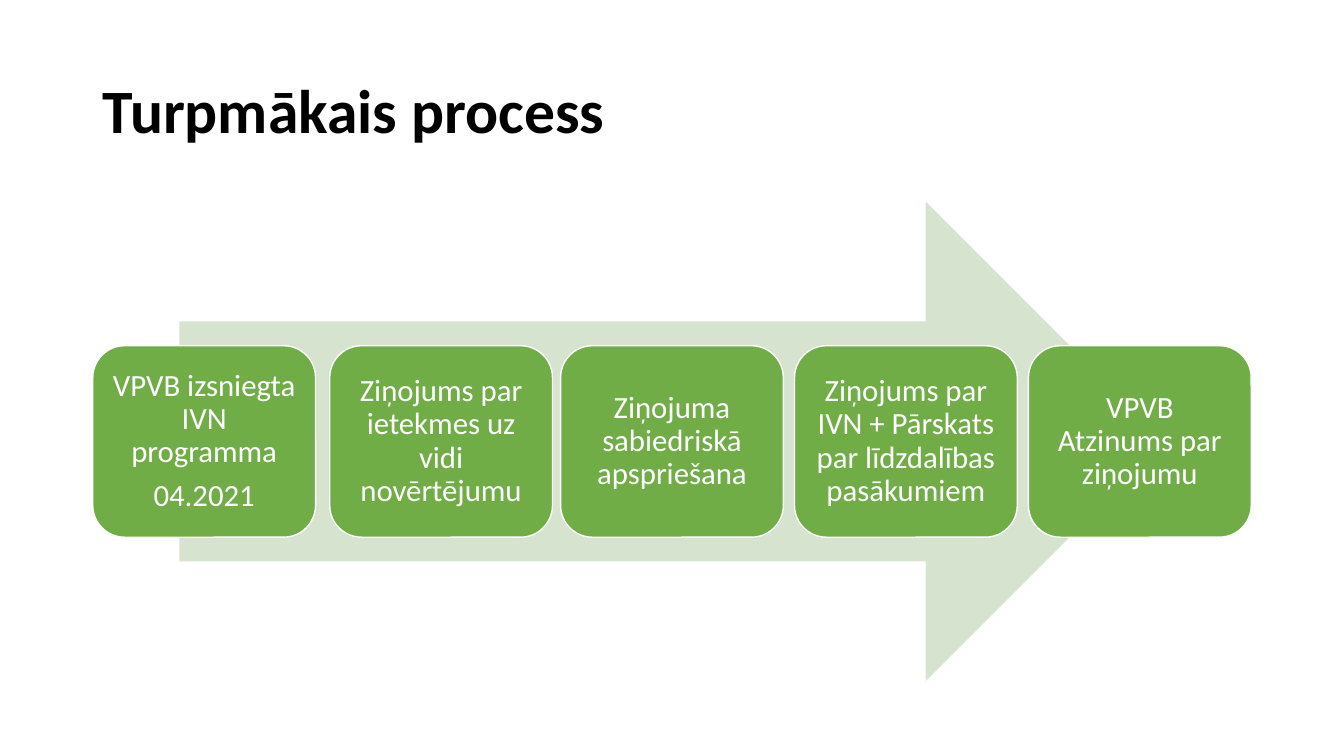
"""Build a slide showing the next steps of the process along an arrow."""
import pptx
import pptx.util
import pptx.dml.color
import pptx.enum.shapes
import pptx.enum.text

Inches = pptx.util.Inches
Pt = pptx.util.Pt
RGBColor = pptx.dml.color.RGBColor
Shape = pptx.enum.shapes.MSO_SHAPE
Align = pptx.enum.text.PP_ALIGN

TITLE = "Turpmākais process"
STEPS = [
    (0.92, ["VPVB izsniegta IVN programma", "04.2021"]),
    (3.27, ["Ziņojums par ietekmes uz vidi novērtējumu"]),
    (5.56, ["Ziņojuma sabiedriskā apspriešana"]),
    (7.88, ["Ziņojums par IVN + Pārskats par līdzdalības pasākumiem"]),
    (10.2, ["VPVB Atzinums par ziņojumu"]),
]

BLACK = RGBColor(0x00, 0x00, 0x00)
WHITE = RGBColor(0xFF, 0xFF, 0xFF)
GREEN = RGBColor(0x70, 0xAD, 0x47)
PALE_GREEN = RGBColor(0xD5, 0xE3, 0xCF)

ARROW_TOP, ARROW_HEIGHT = 2, 4.76
STEP_WIDTH, STEP_HEIGHT = 2.21, 1.9
STEP_TOP = ARROW_TOP + (ARROW_HEIGHT - STEP_HEIGHT) / 2

TITLE_FONT = {"name": "Calibri", "size": Pt(44), "bold": True}
STEP_FONT = {"name": "Calibri", "size": Pt(22)}
TITLE_PARA = {"alignment": Align.LEFT, "line_spacing": 0.9}
STEP_PARA = {"alignment": Align.CENTER, "line_spacing": 0.9, "space_after": Pt(7.7)}
FRAME = {"word_wrap": True, "vertical_anchor": pptx.enum.text.MSO_ANCHOR.MIDDLE}
STEP_FRAME = FRAME | {
    f"margin_{side}": Inches(0.09) for side in ("left", "top", "right", "bottom")
}


def apply(target, values):
    """Set each named attribute on the target."""
    for name, value in values.items():
        setattr(target, name, value)


def write(box, lines, frame_format, para_format, font_format, color):
    """Fill a box with one paragraph per line."""
    frame = box.text_frame
    apply(frame, frame_format)
    for index, line in enumerate(lines):
        para = frame.add_paragraph() if index else frame.paragraphs[0]
        apply(para, para_format)
        span = para.add_run()
        span.text = line
        apply(span.font, font_format)
        span.font.color.rgb = color


def add_filled(page, kind, place, color):
    """Add a flat preset shape."""
    shape = page.shapes.add_shape(kind, *map(Inches, place))
    shape.shadow.inherit = False
    shape.fill.solid()
    shape.fill.fore_color.rgb = color
    shape.line.fill.background()
    return shape


def main():
    """Draw the title, the arrow and the steps."""
    deck = pptx.Presentation()
    deck.slide_width, deck.slide_height = Inches(13.33), Inches(7.5)
    page = deck.slides.add_slide(deck.slide_layouts[6])

    title = page.shapes.add_textbox(*map(Inches, (0.92, 0.4, 11.5, 1.45)))
    write(title, [TITLE], FRAME, TITLE_PARA, TITLE_FONT, BLACK)

    add_filled(page, Shape.RIGHT_ARROW, (1.78, ARROW_TOP, 9.78, ARROW_HEIGHT), PALE_GREEN)

    for left, lines in STEPS:
        place = (left, STEP_TOP, STEP_WIDTH, STEP_HEIGHT)
        step = add_filled(page, Shape.ROUNDED_RECTANGLE, place, GREEN)
        step.line.color.rgb = WHITE
        step.line.width = Pt(1)
        write(step, lines, STEP_FRAME, STEP_PARA, STEP_FONT, WHITE)

    deck.save("out.pptx")


if __name__ == "__main__":
    main()
